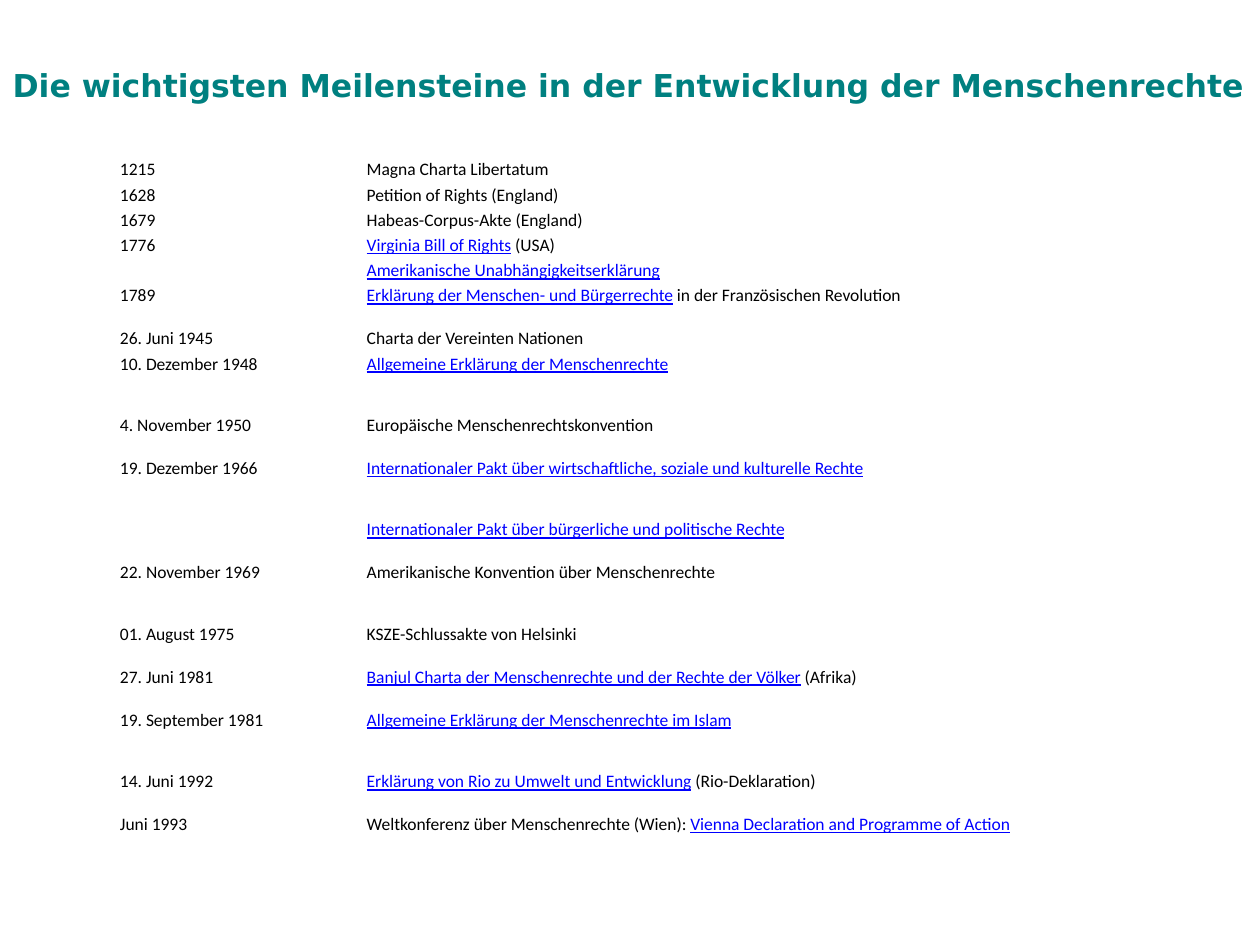
from dataclasses import dataclass

from pptx import Presentation
from pptx.dml.color import RGBColor
from pptx.enum.text import MSO_ANCHOR, MSO_AUTO_SIZE, PP_ALIGN
from pptx.util import Pt

LEFT = PP_ALIGN.LEFT
TOP = MSO_ANCHOR.TOP
NO_AUTOFIT = MSO_AUTO_SIZE.NONE


@dataclass(frozen=True)
class Theme:
    title_font: str = "DejaVu Sans"
    body_font: str = "Calibri"
    title_size: float = 18
    body_size: float = 10
    title: RGBColor = RGBColor(0x00, 0x80, 0x80)
    text: RGBColor = RGBColor(0x00, 0x00, 0x00)
    link: RGBColor = RGBColor(0x00, 0x00, 0xFF)


@dataclass(frozen=True)
class Box:
    left: float
    top: float
    width: float
    height: float

    def lengths(self):
        return Pt(self.left), Pt(self.top), Pt(self.width), Pt(self.height)


THEME = Theme()
PAGE_WIDTH, PAGE_HEIGHT = 720, 540
TITLE_BOX = Box(0, 34, 719, 51)
TABLE_BOX = Box(67.5, 90, 590.5, 409.4)
DATE_WIDTH = 141
CELL_INSET = 1.1
SHORT, MEDIUM, TALL = 14.4, 24.5, 35.2

TITLE = "Die wichtigsten Meilensteine in der Entwicklung der Menschenrechte"

# date, text before link, link, text after link, row height
MILESTONES = [
    ("1215", "Magna Charta Libertatum", "", "", SHORT),
    ("1628", "Petition of Rights (England)", "", "", SHORT),
    ("1679", "Habeas-Corpus-Akte (England)", "", "", SHORT),
    ("1776", "", "Virginia Bill of Rights", " (USA)", SHORT),
    ("", "", "Amerikanische Unabhängigkeitserklärung", "", SHORT),
    ("1789", "", "Erklärung der Menschen- und Bürgerrechte",
     " in der Französischen Revolution", MEDIUM),
    ("26. Juni 1945", "Charta der Vereinten Nationen", "", "", SHORT),
    ("10. Dezember 1948", "", "Allgemeine Erklärung der Menschenrechte", "", TALL),
    ("4. November 1950", "Europäische Menschenrechtskonvention", "", "", MEDIUM),
    ("19. Dezember 1966", "",
     "Internationaler Pakt über wirtschaftliche, soziale und kulturelle Rechte", "", TALL),
    ("", "", "Internationaler Pakt über bürgerliche und politische Rechte", "", MEDIUM),
    ("22. November 1969", "Amerikanische Konvention über Menschenrechte", "", "", TALL),
    ("01. August 1975", "KSZE-Schlussakte von Helsinki", "", "", MEDIUM),
    ("27. Juni 1981", "", "Banjul Charta der Menschenrechte und der Rechte der Völker",
     " (Afrika)", MEDIUM),
    ("19. September 1981", "", "Allgemeine Erklärung der Menschenrechte im Islam", "", TALL),
    ("14. Juni 1992", "", "Erklärung von Rio zu Umwelt und Entwicklung",
     " (Rio-Deklaration)", MEDIUM),
    ("Juni 1993", "Weltkonferenz über Menschenrechte (Wien): ",
     "Vienna Declaration and Programme of Action", "", TALL),
]


def add_span(para, text, font, size, color, bold=False, underline=False):
    span = para.add_run()
    span.text = text
    span.font.name = font
    span.font.size = Pt(size)
    span.font.color.rgb = color
    span.font.bold = bold
    span.font.underline = underline


def place_title(page, box):
    title = page.shapes.title
    title.left, title.top, title.width, title.height = box.lengths()
    frame = title.text_frame
    frame.auto_size = NO_AUTOFIT
    frame.word_wrap = False
    frame.vertical_anchor = TOP
    para = frame.paragraphs[0]
    para.alignment = LEFT
    para.line_spacing = 1.0
    para.space_before = Pt(0)
    add_span(para, TITLE, THEME.title_font, THEME.title_size, THEME.title, bold=True)


def fill_cell(cell, before="", link="", after=""):
    cell.fill.background()
    cell.vertical_anchor = TOP
    cell.margin_left = cell.margin_right = Pt(CELL_INSET)
    cell.margin_top = cell.margin_bottom = Pt(CELL_INSET)
    para = cell.text_frame.paragraphs[0]
    para.alignment = LEFT
    for text, is_link in ((before, False), (link, True), (after, False)):
        if text:
            color = THEME.link if is_link else THEME.text
            add_span(para, text, THEME.body_font, THEME.body_size, color, underline=is_link)
    end_properties = para._p.get_or_add_endParaRPr()
    end_properties.set("sz", str(int(THEME.body_size * 100)))


def place_milestones(page, box):
    table = page.shapes.add_table(len(MILESTONES), 2, *box.lengths()).table
    table.first_row = False
    table.horz_banding = False
    table.columns[0].width = Pt(DATE_WIDTH)
    table.columns[1].width = Pt(box.width - DATE_WIDTH)
    for row, (date, before, link, after, height) in zip(table.rows, MILESTONES):
        row.height = Pt(height)
        fill_cell(row.cells[0], date)
        fill_cell(row.cells[1], before, link, after)


def main():
    deck = Presentation()
    deck.slide_width, deck.slide_height = Pt(PAGE_WIDTH), Pt(PAGE_HEIGHT)
    page = deck.slides.add_slide(deck.slide_layouts.get_by_name("Title Only"))
    place_milestones(page, TABLE_BOX)
    place_title(page, TITLE_BOX)
    deck.save("out.pptx")


if __name__ == "__main__":
    main()
